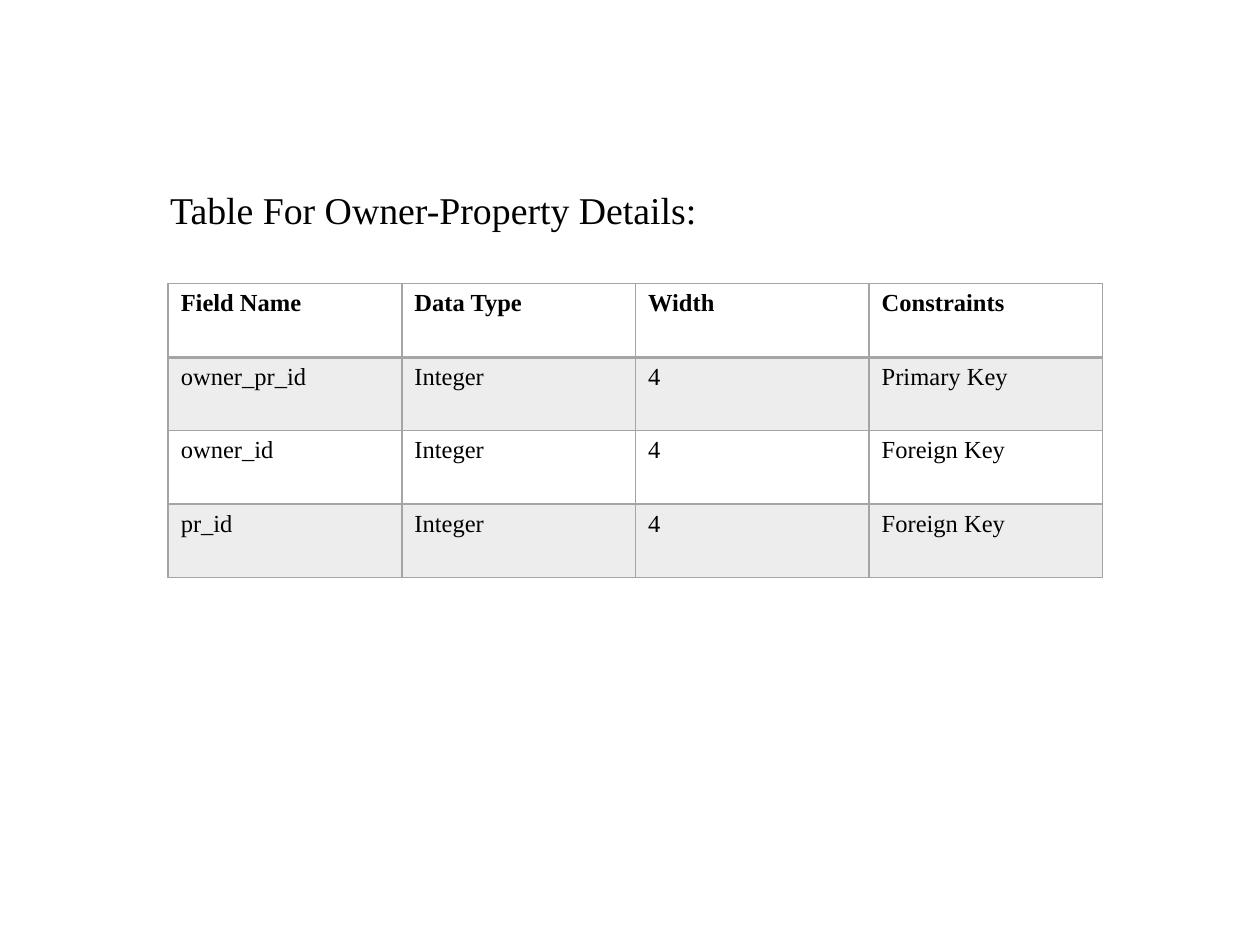
"""Build a slide with the field table for owner-property details."""
from lxml.etree import SubElement
from pptx import Presentation
from pptx.dml.color import RGBColor
from pptx.enum.text import MSO_ANCHOR
from pptx.oxml.ns import qn
from pptx.util import Cm, Pt

BLACK = RGBColor(0x00, 0x00, 0x00)
GRAY = RGBColor(0xA5, 0xA5, 0xA5)


def write(frame, text, size=14, bold=False, space=1.0):
    para = frame.paragraphs[0]
    para.line_spacing = space
    run = para.add_run()
    run.text = text
    font = run.font
    font.name = "Times New Roman"
    font.size = Pt(size)
    font.bold = bold
    font.color.rgb = BLACK


def border(cell, side, width):
    props = cell._tc.get_or_add_tcPr()
    line = SubElement(props, qn(f"a:ln{side}"), w=str(Pt(width)))
    fill = SubElement(line, qn("a:solidFill"))
    SubElement(fill, qn("a:srgbClr"), val=str(GRAY))


deck = Presentation()
deck.slide_width = Cm(25.4)
deck.slide_height = Cm(19.05)
slide = deck.slides.add_slide(deck.slide_layouts[6])

title = slide.shapes.add_textbox(Cm(3.18), Cm(3.66), Cm(12.27), Cm(1.22))
title.text_frame.word_wrap = True
title.text_frame.vertical_anchor = MSO_ANCHOR.MIDDLE
write(title.text_frame, "Table For Owner-Property Details:", size=21.6, space=0.9)

rows = [
    ("Field Name", "Data Type", "Width", "Constraints"),
    ("owner_pr_id", "Integer", "4", "Primary Key"),
    ("owner_id", "Integer", "4", "Foreign Key"),
    ("pr_id", "Integer", "4", "Foreign Key"),
]
wide, high = Cm(4.71), Cm(1.48)
count = len(rows[0])
table = slide.shapes.add_table(
    len(rows), count, Cm(3.39), Cm(5.72), wide * count, high * len(rows)
).table
table.horz_banding = False
for col in table.columns:
    col.width = wide
for row in table.rows:
    row.height = high

for r, row in enumerate(rows):
    for c, text in enumerate(row):
        cell = table.cell(r, c)
        write(cell.text_frame, text, bold=r == 0)
        for side in "LRTB":
            thick = (r, side) in ((0, "B"), (1, "T"))
            border(cell, side, 2 if thick else 1)
        if r % 2:
            cell.fill.solid()
            cell.fill.fore_color.rgb = GRAY
            tint = cell._tc.tcPr.find(qn("a:solidFill")).find(qn("a:srgbClr"))
            SubElement(tint, qn("a:alpha"), val="20000")
        else:
            cell.fill.background()

deck.save("out.pptx")
